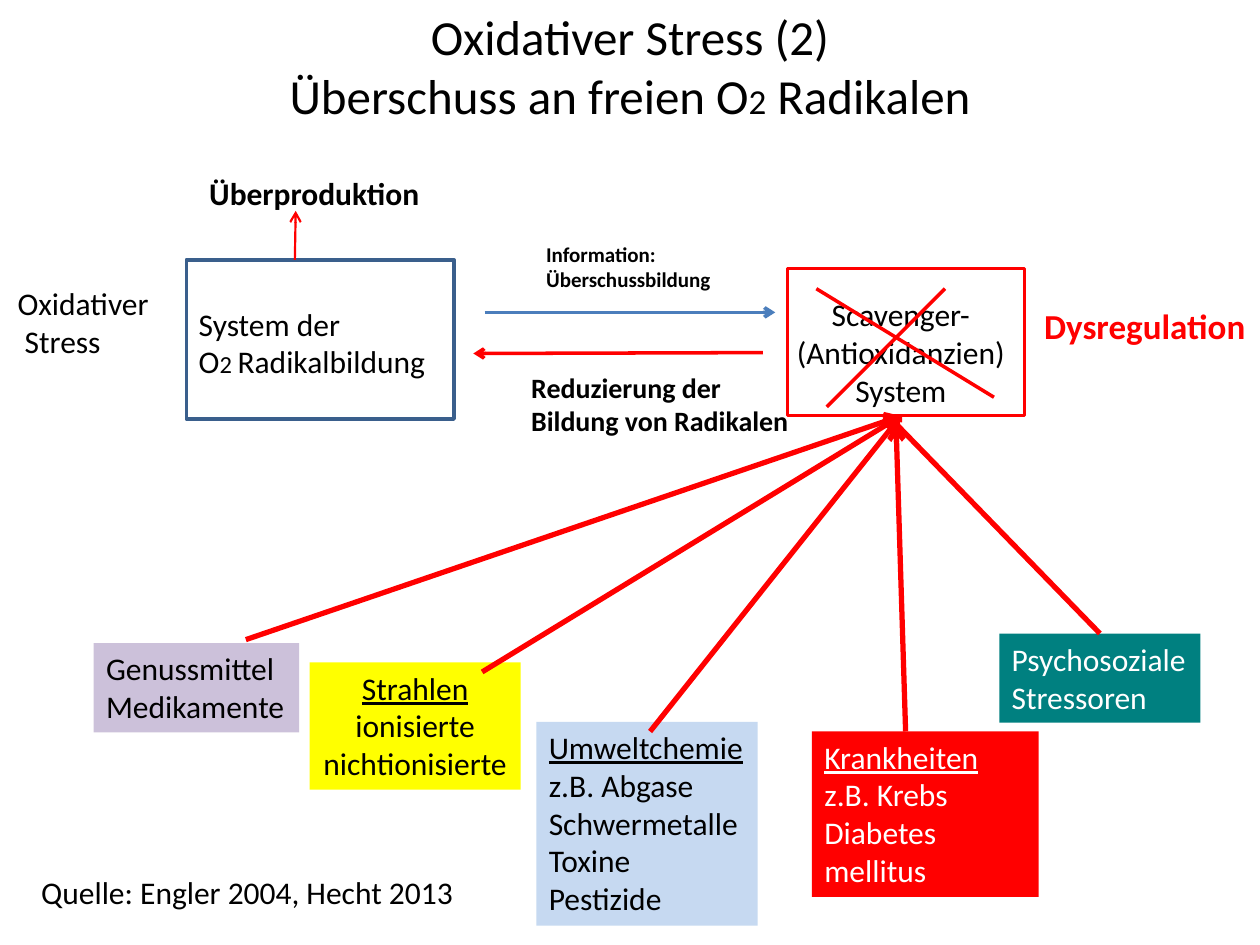
from lxml import etree
from pptx import Presentation
from pptx.dml.color import RGBColor
from pptx.enum import shapes, text
from pptx.oxml.ns import qn
from pptx.util import Pt

BLACK = RGBColor(0, 0, 0)
WHITE = RGBColor(255, 255, 255)
RED = RGBColor(255, 0, 0)
NAVY = RGBColor(0x3A, 0x5F, 0x8C)
BLUE = RGBColor(0x4B, 0x7E, 0xBC)
LILAC = RGBColor(0xCC, 0xC1, 0xDA)
YELLOW = RGBColor(255, 255, 0)
PALE_BLUE = RGBColor(0xC6, 0xD9, 0xF1)
TEAL = RGBColor(0, 0x80, 0x80)
LEFT, CENTER = text.PP_ALIGN.LEFT, text.PP_ALIGN.CENTER

presentation = Presentation()
presentation.slide_width, presentation.slide_height = Pt(720), Pt(540)
slide = presentation.slides.add_slide(presentation.slide_layouts[5])


def add_label(box, lines, size=18, color=BLACK, bold=False, align=LEFT, wrap=False):
    shape = slide.shapes.add_textbox(*[Pt(value) for value in box])
    frame = shape.text_frame
    frame.text = lines
    frame.word_wrap = wrap
    frame.auto_size = text.MSO_AUTO_SIZE.SHAPE_TO_FIT_TEXT
    for paragraph in frame.paragraphs:
        paragraph.alignment = align
        for run in paragraph.runs:
            run.font.name, run.font.size = "Calibri", Pt(size)
            run.font.color.rgb, run.font.bold = color, bold
    return shape


def add_line(start, end, color=RED, width=2, arrow=True):
    points = [Pt(value) for value in start + end]
    line = slide.shapes.add_connector(shapes.MSO_CONNECTOR.STRAIGHT, *points)
    line.line.color.rgb, line.line.width = color, Pt(width)
    if arrow:
        outline = line.line._get_or_add_ln()
        etree.SubElement(outline, qn("a:tailEnd"), type="arrow")
    etree.SubElement(line._element.spPr, qn("a:effectLst"))
    return line


title = slide.shapes.title
title.left, title.top, title.width, title.height = Pt(0), Pt(0), Pt(720), Pt(75)
title.text_frame.text = "Oxidativer Stress (2)\vÜberschuss an freien O"
title.text_frame.vertical_anchor = text.MSO_ANCHOR.MIDDLE
title_paragraph = title.text_frame.paragraphs[0]
title_paragraph.alignment = CENTER
for part in ("2", " Radikalen"):
    title_paragraph.add_run().text = part
for run in title_paragraph.runs:
    run.font.name, run.font.color.rgb = "Calibri", BLACK
    run.font.size = Pt(20 if run.text == "2" else 28)

for box, color in (((106.5, 148.5, 153, 91), NAVY), ((450, 153.5, 135.5, 84), RED)):
    frame_box = slide.shapes.add_shape(
        shapes.MSO_SHAPE.RECTANGLE, *[Pt(value) for value in box])
    frame_box.shadow.inherit = False
    frame_box.fill.background()
    frame_box.line.color.rgb, frame_box.line.width = color, Pt(2)

add_label((3, 159, 90, 51), "Oxidativer\n Stress")
add_label((112.5, 96, 135.5, 29), "Überproduktion", bold=True)
radicals = add_label((106.5, 170.5, 147, 51), "System der\nO")
for part, size in (("2 ", 14), ("Radikalbildung", 18)):
    run = radicals.text_frame.paragraphs[1].add_run()
    run.text = part
    run.font.name, run.font.size, run.font.color.rgb = "Calibri", Pt(size), BLACK
scavenger = add_label((444.5, 165, 140.5, 72.7),
                      "Scavenger-\n(Antioxidanzien)\nSystem", align=CENTER, wrap=True)
add_label((305, 134.5, 110, 36), "Information:\nÜberschussbildung", size=12, bold=True)
add_label((296.5, 208, 163.5, 46), "Reduzierung der\nBildung von Radikalen",
          size=16, bold=True)
add_label((589.5, 170.5, 131, 31.5), "Dysregulation", size=20, color=RED, bold=True)
add_label((16.5, 495.5, 252.5, 29), "Quelle: Engler 2004, Hecht 2013")

add_line((277, 178.5), (443, 178.5), BLUE)
add_line((436, 201.5), (270.5, 202))
add_line((168.5, 148.5), (169, 120.5), width=1.25)
add_line((540, 165), (472.5, 232.5), arrow=False)
add_line((568, 227), (466.5, 165), arrow=False)

causes = [
    ((53.5, 367.5, 117.5, 51), "Genussmittel\nMedikamente", LILAC, BLACK, LEFT, False),
    ((177, 378.5, 120.5, 72.7), "Strahlen\nionisierte\nnichtionisierte",
     YELLOW, BLACK, CENTER, True),
    ((306.5, 412.5, 126.5, 116.5),
     "Umweltchemie\nz.B. Abgase\nSchwermetalle\nToxine\nPestizide",
     PALE_BLUE, BLACK, LEFT, True),
    ((464, 418, 129.5, 94.5), "Krankheiten\nz.B. Krebs\nDiabetes mellitus",
     RED, WHITE, LEFT, True),
    ((571, 362, 115, 51), "Psychosoziale\nStressoren", TEAL, WHITE, LEFT, False),
]
for box, lines, fill, color, align, heading in causes:
    cause = add_label(box, lines, color=color, align=align, wrap=fill == RED)
    cause.fill.solid()
    cause.fill.fore_color.rgb = fill
    if heading:
        cause.text_frame.paragraphs[0].runs[0].font.underline = True
stressors = cause

for start in ((140.5, 365.5), (275.5, 384), (371.5, 418)):
    add_line(start, (514.5, 237.5), width=3).end_connect(scavenger, 2)
add_line((517.5, 418), (512, 242), width=3)
add_line((628.5, 362), (506, 236), width=3).begin_connect(stressors, 0)

presentation.save("out.pptx")
